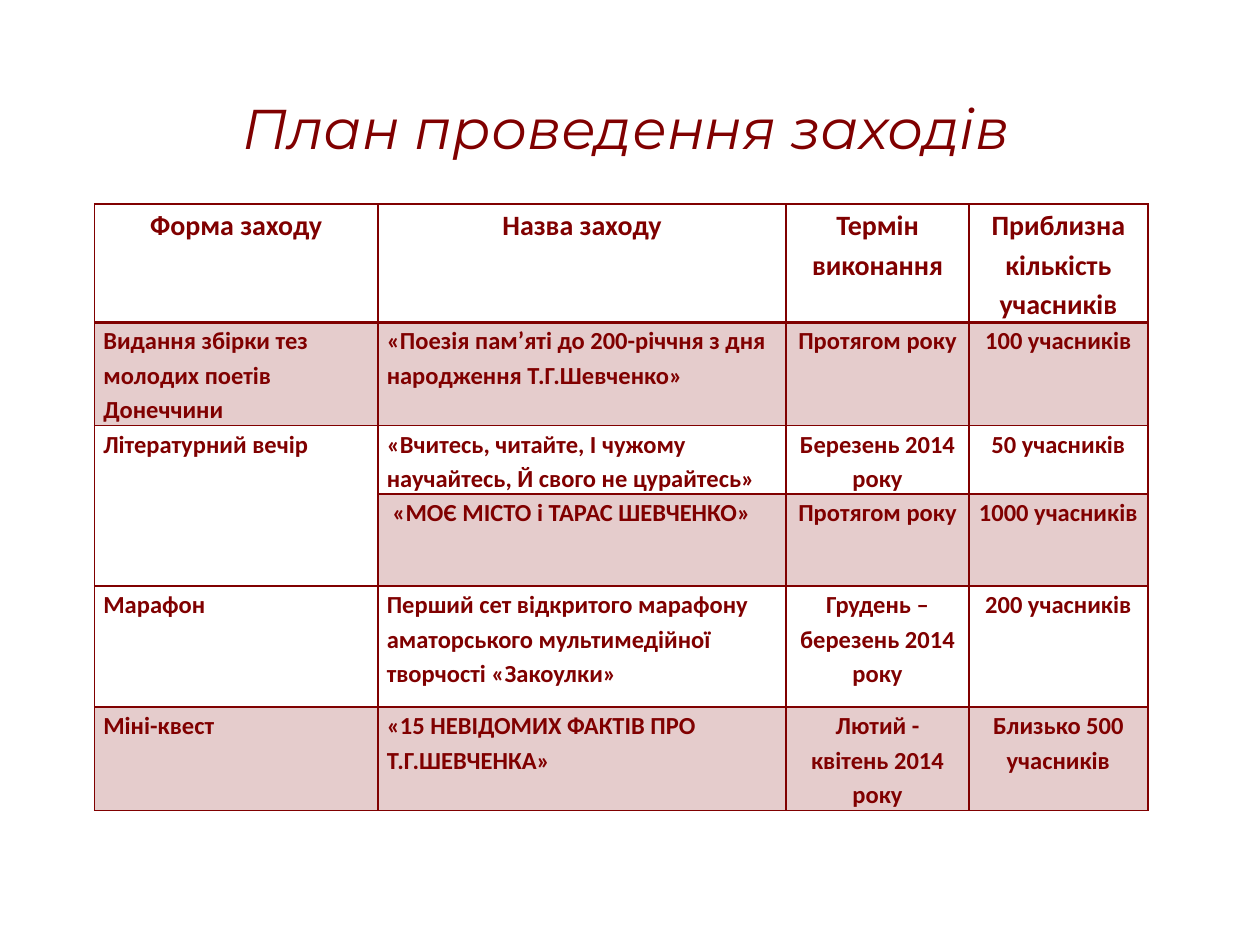
from typing import NamedTuple

from lxml import etree
from pptx import Presentation
from pptx import util as u
from pptx.dml.color import RGBColor
from pptx.enum import text
from pptx.oxml.ns import qn

MAROON = "800000"
COLUMN_WIDTHS = (2.25, 3.24, 1.45, 1.42)


class Event(NamedTuple):
    form: str
    name: str
    term: str
    participants: str
    height: float
    shaded: tuple[bool, ...] = (False,) * 4


SHADED = (True,) * 4
HEADER = Event("Форма заходу", "Назва заходу", "Термін виконання",
               "Приблизна кількість учасників", 0.93)
EVENTS = [
    Event("Видання збірки тез молодих поетів Донеччини",
          "«Поезія пам’яті до 200-річчня з дня народження Т.Г.Шевченко»",
          "Протягом року", "100 учасників", 0.82, SHADED),
    Event("Літературний вечір",
          "«Вчитесь, читайте, І чужому научайтесь, Й свого не цурайтесь»",
          "Березень 2014 року", "50 учасників", 0.54),
    Event("", " «МОЄ МІСТО і ТАРАС ШЕВЧЕНКО»",
          "Протягом року", "1000 учасників", 0.73, (False, True, True, True)),
    Event("Марафон",
          "Перший сет відкритого марафону аматорського мультимедійної "
          "творчості «Закоулки»",
          "Грудень –березень 2014 року", "200 учасників", 0.96),
    Event("Міні-квест", "«15 НЕВІДОМИХ ФАКТІВ ПРО Т.Г.ШЕВЧЕНКА»",
          "Лютий - квітень 2014 року", "Близько 500 учасників", 0.82, SHADED),
]


def rgb(value: str) -> RGBColor:
    return RGBColor.from_string(value)


def set_font(paragraph, name: str, size: float, bold=False, italic=False) -> None:
    font = paragraph.font
    font.name, font.size = name, u.Pt(size)
    font.bold, font.italic = bold, italic
    font.color.rgb = rgb(MAROON)


def set_borders(cell, top: float, bottom: float) -> None:
    """Outline a cell; widths are in points, the sides are always 1."""
    properties = cell._tc.get_or_add_tcPr()
    sides = {"a:lnL": 1, "a:lnR": 1, "a:lnT": top, "a:lnB": bottom}
    for index, (tag, width) in enumerate(sides.items()):
        line = etree.Element(qn(tag), w=str(u.Pt(width)))
        fill = etree.SubElement(line, qn("a:solidFill"))
        etree.SubElement(fill, qn("a:srgbClr"), val=MAROON)
        properties.insert(index, line)


def set_fill(cell, shaded: bool) -> None:
    if not shaded:
        cell.fill.background()
        return
    cell.fill.solid()
    cell.fill.fore_color.rgb = rgb(MAROON)
    color = cell._tc.tcPr.find(".//" + qn("a:solidFill") + "/" + qn("a:srgbClr"))
    etree.SubElement(color, qn("a:alpha"), val="20000")


def fill_cell(cell, words: str, size: float, centred: bool) -> None:
    cell.margin_left = cell.margin_right = u.Inches(0.07)
    cell.margin_top = cell.margin_bottom = 0
    cell.text = words
    paragraph = cell.text_frame.paragraphs[0]
    paragraph.line_spacing = 1.15
    paragraph.alignment = text.PP_ALIGN.CENTER if centred else text.PP_ALIGN.LEFT
    set_font(paragraph, "Calibri", size, bold=True)


def add_title(slide, words: str) -> None:
    title = slide.shapes.title
    title.left, title.top = u.Inches(0.47), u.Inches(0.7)
    title.width, title.height = u.Inches(9), u.Inches(0.61)
    title.text_frame.text = words
    title.text_frame.vertical_anchor = text.MSO_ANCHOR.MIDDLE
    heading = title.text_frame.paragraphs[0]
    heading.alignment = text.PP_ALIGN.CENTER
    set_font(heading, "Montserrat", 32, italic=True)


def add_plan(slide, rows: list[Event]) -> None:
    plan = slide.shapes.add_table(
        len(rows), len(COLUMN_WIDTHS), u.Inches(0.75), u.Inches(1.62),
        u.Inches(sum(COLUMN_WIDTHS)), u.Inches(sum(row.height for row in rows))).table
    plan.first_row = plan.horz_banding = False
    for column, width in zip(plan.columns, COLUMN_WIDTHS):
        column.width = u.Inches(width)

    for r, event in enumerate(rows):
        plan.rows[r].height = u.Inches(event.height)
        for c, words in enumerate(event[:4]):
            cell = plan.cell(r, c)
            fill_cell(cell, words, 16 if r == 0 else 14, centred=r == 0 or c >= 2)
            set_fill(cell, event.shaded[c])
            # A heavier rule separates the header from the events
            set_borders(cell, top=2 if r == 1 else 1, bottom=2 if r == 0 else 1)

    # The literary evening covers two events
    plan.cell(2, 0).merge(plan.cell(3, 0))


def main() -> None:
    deck = Presentation()
    deck.slide_width, deck.slide_height = u.Inches(10), u.Inches(7.5)
    slide = deck.slides.add_slide(deck.slide_layouts[5])
    add_title(slide, "План проведення заходів")
    add_plan(slide, [HEADER, *EVENTS])
    deck.save("out.pptx")


if __name__ == "__main__":
    main()
